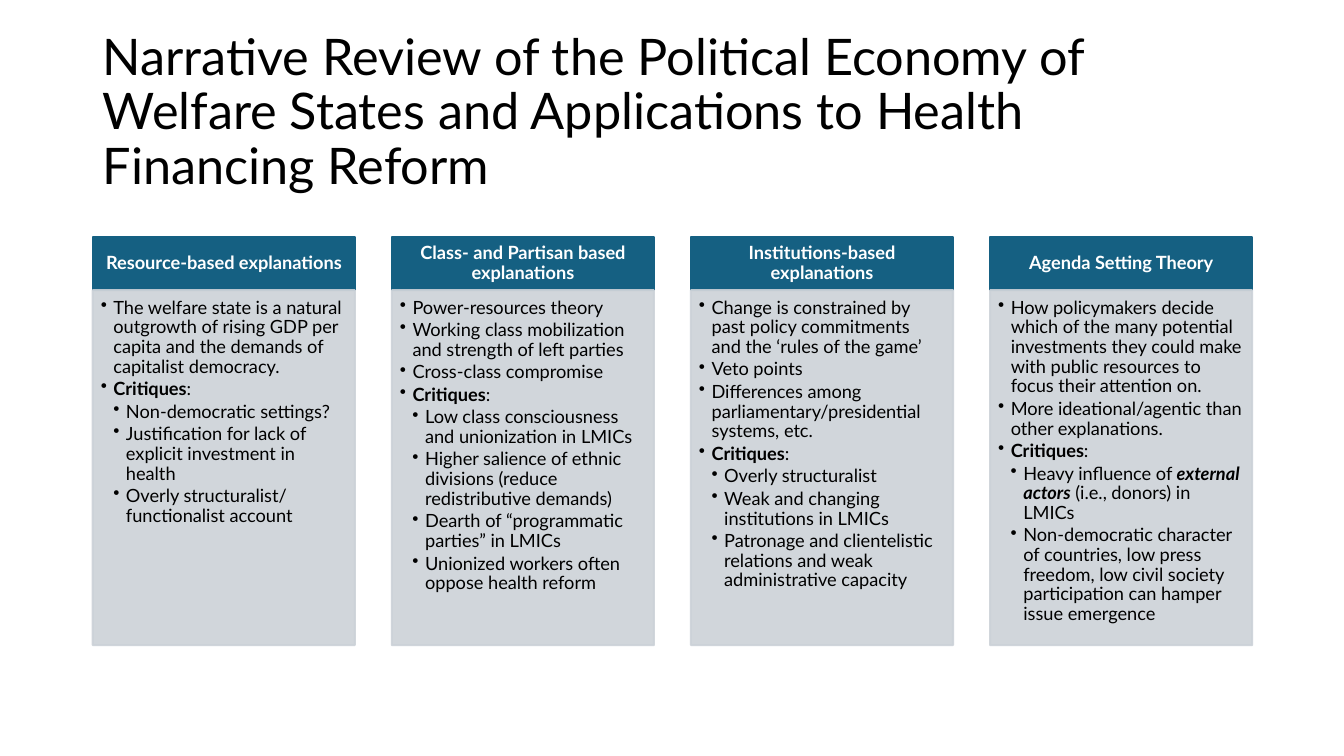
"""Build a slide comparing four explanations of welfare states and health financing reform."""
import lxml.etree
import pptx
import pptx.dml.color
import pptx.enum.shapes
import pptx.enum.text
import pptx.oxml.ns
import pptx.util

Inches = pptx.util.Inches
Pt = pptx.util.Pt

FONT = "Lato"
HEADER_COLOR = "156082"
BODY_COLOR = "CCD2D8"
LEFT, CONTENT_WIDTH, COLUMN_WIDTH = 0.92, 11.5, 2.6
HEADER_TOP, HEADER_HEIGHT, BODY_HEIGHT = 2.35, 0.53, 3.52
BULLET_INDENT = 0.125

CRITIQUES = (1, [("Critiques", "bold"), (":", "")])
COLUMNS = [
    ("Resource-based explanations", [
        (1, [("The welfare state is a natural outgrowth of rising GDP per capita "
              "and the demands of capitalist democracy.", "")]),
        CRITIQUES,
        (2, [("Non-democratic settings?", "")]),
        (2, [("Justification for lack of explicit investment in health", "")]),
        (2, [("Overly structuralist/ functionalist account", "")]),
    ]),
    ("Class- and Partisan based explanations", [
        (1, [("Power-resources theory", "")]),
        (1, [("Working class mobilization and strength of left parties", "")]),
        (1, [("Cross-class compromise", "")]),
        CRITIQUES,
        (2, [("Low class consciousness and unionization in LMICs", "")]),
        (2, [("Higher salience of ethnic divisions (reduce redistributive demands)", "")]),
        (2, [("Dearth of “programmatic parties” in LMICs", "")]),
        (2, [("Unionized workers often oppose health reform", "")]),
    ]),
    ("Institutions-based explanations", [
        (1, [("Change is constrained by past policy commitments "
              "and the ‘rules of the game’", "")]),
        (1, [("Veto points", "")]),
        (1, [("Differences among parliamentary/presidential systems, etc.", "")]),
        CRITIQUES,
        (2, [("Overly structuralist", "")]),
        (2, [("Weak and changing institutions in LMICs", "")]),
        (2, [("Patronage and clientelistic relations and weak administrative capacity", "")]),
    ]),
    ("Agenda Setting Theory", [
        (1, [("How policymakers decide which of the many potential investments they could "
              "make with public resources to focus their attention on.", "")]),
        (1, [("More ideational/agentic than other explanations.", "")]),
        CRITIQUES,
        (2, [("Heavy influence of ", ""), ("external actors", "bold italic"),
             (" (i.e., donors) in LMICs", "")]),
        (2, [("Non-democratic character of countries, low press freedom, low civil society "
              "participation can hamper issue emergence", "")]),
    ]),
]


def rgb(color):
    return pptx.dml.color.RGBColor.from_string(color)


def add_box(left, top, height, color, margins, anchor):
    shape = slide.shapes.add_shape(
        pptx.enum.shapes.MSO_SHAPE.RECTANGLE,
        Inches(left), Inches(top), Inches(COLUMN_WIDTH), Inches(height))
    shape.shadow.inherit = False
    shape.fill.solid()
    shape.fill.fore_color.rgb = rgb(color)
    shape.line.color.rgb = rgb(color)
    shape.line.width = Pt(1.5)
    frame = shape.text_frame
    frame.word_wrap = True
    frame.vertical_anchor = anchor
    frame.margin_left, frame.margin_top, frame.margin_right, frame.margin_bottom = map(Inches, margins)
    return shape


presentation = pptx.Presentation()
presentation.slide_width = Inches(13.33)
presentation.slide_height = Inches(7.5)
slide = presentation.slides.add_slide(presentation.slide_layouts[6])

title = slide.shapes.add_textbox(Inches(LEFT), Inches(0.4), Inches(CONTENT_WIDTH), Inches(1.45))
title.text_frame.word_wrap = True
title.text_frame.vertical_anchor = pptx.enum.text.MSO_ANCHOR.MIDDLE
title.text_frame.text = ("Narrative Review of the Political Economy of Welfare States "
                         "and Applications to Health Financing Reform")
paragraph = title.text_frame.paragraphs[0]
paragraph.line_spacing = 0.9
font = paragraph.runs[0].font
font.name, font.size, font.color.rgb = FONT, Pt(36), rgb("000000")

column_step = (CONTENT_WIDTH - COLUMN_WIDTH) / (len(COLUMNS) - 1)
for column, (heading, points) in enumerate(COLUMNS):
    left = LEFT + column * column_step
    header = add_box(left, HEADER_TOP, HEADER_HEIGHT, HEADER_COLOR,
                     (0.1, 0.06, 0.1, 0.06), pptx.enum.text.MSO_ANCHOR.MIDDLE)
    header.text_frame.text = heading
    paragraph = header.text_frame.paragraphs[0]
    paragraph.alignment = pptx.enum.text.PP_ALIGN.CENTER
    paragraph.line_spacing = 0.9
    font = paragraph.runs[0].font
    font.name, font.size, font.bold, font.color.rgb = FONT, Pt(13), True, rgb("FFFFFF")

    body = add_box(left, HEADER_TOP + HEADER_HEIGHT, BODY_HEIGHT, BODY_COLOR,
                   (0.08, 0.08, 0.1, 0.11), pptx.enum.text.MSO_ANCHOR.TOP)
    for color_element in body.element.spPr.iter(pptx.oxml.ns.qn("a:srgbClr")):
        lxml.etree.SubElement(color_element, pptx.oxml.ns.qn("a:alpha"), val="90000")

    for index, (level, pieces) in enumerate(points):
        paragraph = body.text_frame.add_paragraph() if index else body.text_frame.paragraphs[0]
        paragraph.level = level
        paragraph.alignment = pptx.enum.text.PP_ALIGN.LEFT
        paragraph.line_spacing = 0.9
        paragraph.space_after = Pt(2)
        properties = paragraph._p.get_or_add_pPr()
        properties.set("marL", str(Inches(level * BULLET_INDENT)))
        properties.set("indent", str(Inches(-BULLET_INDENT)))
        lxml.etree.SubElement(properties, pptx.oxml.ns.qn("a:buChar"), char="•")
        for text, style in pieces:
            run = paragraph.add_run()
            run.text = text
            run.font.name, run.font.size, run.font.color.rgb = FONT, Pt(13), rgb("000000")
            run.font.bold = "bold" in style
            run.font.italic = "italic" in style

presentation.save("out.pptx")
